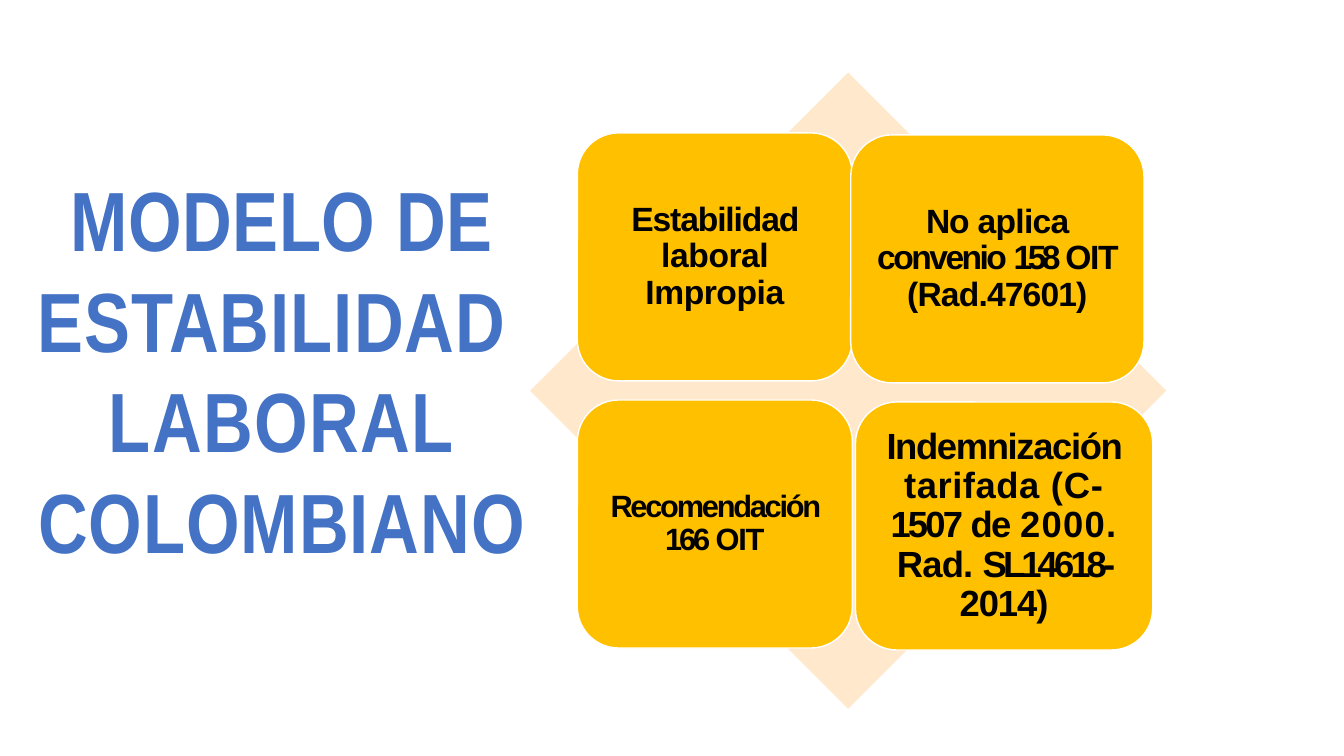
from pptx import Presentation
from pptx.dml.color import RGBColor
from pptx.enum.shapes import MSO_SHAPE
from pptx.enum.text import MSO_ANCHOR, MSO_AUTO_SIZE, PP_ALIGN
from pptx.util import Cm, Pt

COLORS = {"title": "4472C4", "card": "FFC000", "diamond": "FFE8CC",
          "outline": "FFFFFF", "text": "000000"}

TITLE = [
    [("MODELO ", 0.5), ("DE ", 0.4), ("ESTABILIDAD ", 0.8)],
    [("LABORAL ", 1.1), ("COLOMBIANO", 0.7)],
]

CARDS = [
    ((1.19, 1.52, 6.93), 24, 0.25,
     [("Estabilidad ", -0.8), ("laboral Impropia", -0.3)]),
    ((8.08, 1.57, 7.39), 24, 0.25,
     [("No ", -0.9), ("aplica ", -0.5), ("convenio ", -1.8), ("158 ", -3.3),
      ("OIT ", -0.9), ("(Rad.47601)", -0.6)]),
    ((1.19, 8.25, 6.93), 22, 0.23,
     [("Recomendación ", -1.6), ("166 ", -2.2), ("OIT", -0.9)]),
    ((8.2, 8.3, 7.49), 26, 0.28,
     [("Indemnización ", -1), ("tarifada ", 0.4), ("(C- ", 0.6), ("1507 ", -2),
      ("de ", -1.1), ("2000. ", 0.9), ("Rad. ", -0.6), ("SL14618- ", -2.8),
      ("2014)", -0.8)]),
]
CARD_HEIGHT = 6.25


def write_spans(para, spans, font_name, size, color):
    """Fill a centred paragraph with bold spans, each with its own tracking."""
    para.alignment = PP_ALIGN.CENTER
    for words, tracking in spans:
        span = para.add_run()
        span.text = words
        span.font.name = font_name
        span.font.size = Pt(size)
        span.font.bold = True
        span.font.color.rgb = RGBColor.from_string(COLORS[color])
        span.font._element.set("spc", str(round(tracking * 100)))


def add_panel(page, kind, left, top, width, height, fill):
    """Add a flat filled shape without an outline."""
    panel = page.shapes.add_shape(kind, Cm(left), Cm(top), Cm(width), Cm(height))
    panel.shadow.inherit = False
    panel.fill.solid()
    panel.fill.fore_color.rgb = RGBColor.from_string(COLORS[fill])
    panel.line.fill.background()
    return panel


def place_title(page, left, top, width, height):
    """Move the title placeholder to its box and write the heading."""
    title = page.shapes.title
    title.left, title.top = Cm(left), Cm(top)
    title.width, title.height = Cm(width), Cm(height)
    frame = title.text_frame
    frame.word_wrap = True
    frame.auto_size = MSO_AUTO_SIZE.SHAPE_TO_FIT_TEXT
    frame.vertical_anchor = MSO_ANCHOR.TOP
    for index, spans in enumerate(TITLE):
        para = frame.add_paragraph() if index else frame.paragraphs[0]
        write_spans(para, spans, "Arial Narrow", 60, "title")


def add_card(page, left, top, width, size, margin, spans):
    """Add one rounded card with its centred statement."""
    card = add_panel(page, MSO_SHAPE.ROUNDED_RECTANGLE,
                     left, top, width, CARD_HEIGHT, "card")
    card.line.color.rgb = RGBColor.from_string(COLORS["outline"])
    card.line.width = Pt(1)
    frame = card.text_frame
    frame.word_wrap = True
    frame.vertical_anchor = MSO_ANCHOR.MIDDLE
    frame.margin_left = frame.margin_right = Cm(margin)
    frame.margin_top = frame.margin_bottom = Cm(margin)
    para = frame.paragraphs[0]
    para.line_spacing = 0.9
    write_spans(para, spans, "Arial", size, "text")


def add_matrix(page, left, top, side):
    """Draw the diamond in its square box and the four cards over it."""
    add_panel(page, MSO_SHAPE.DIAMOND, left, top, side, side, "diamond")
    for (across, down, width), size, margin, spans in CARDS:
        add_card(page, left + across, top + down, width, size, margin, spans)


def main():
    """Build and save the slide."""
    deck = Presentation()
    deck.slide_width, deck.slide_height = Cm(33.87), Cm(19.05)
    page = deck.slides.add_slide(deck.slide_layouts[5])
    place_title(page, 0.66, 4.09, 12.88, 14.27)
    add_matrix(page, 13.36, 1.83, 16.03)
    deck.save("out.pptx")


if __name__ == "__main__":
    main()
